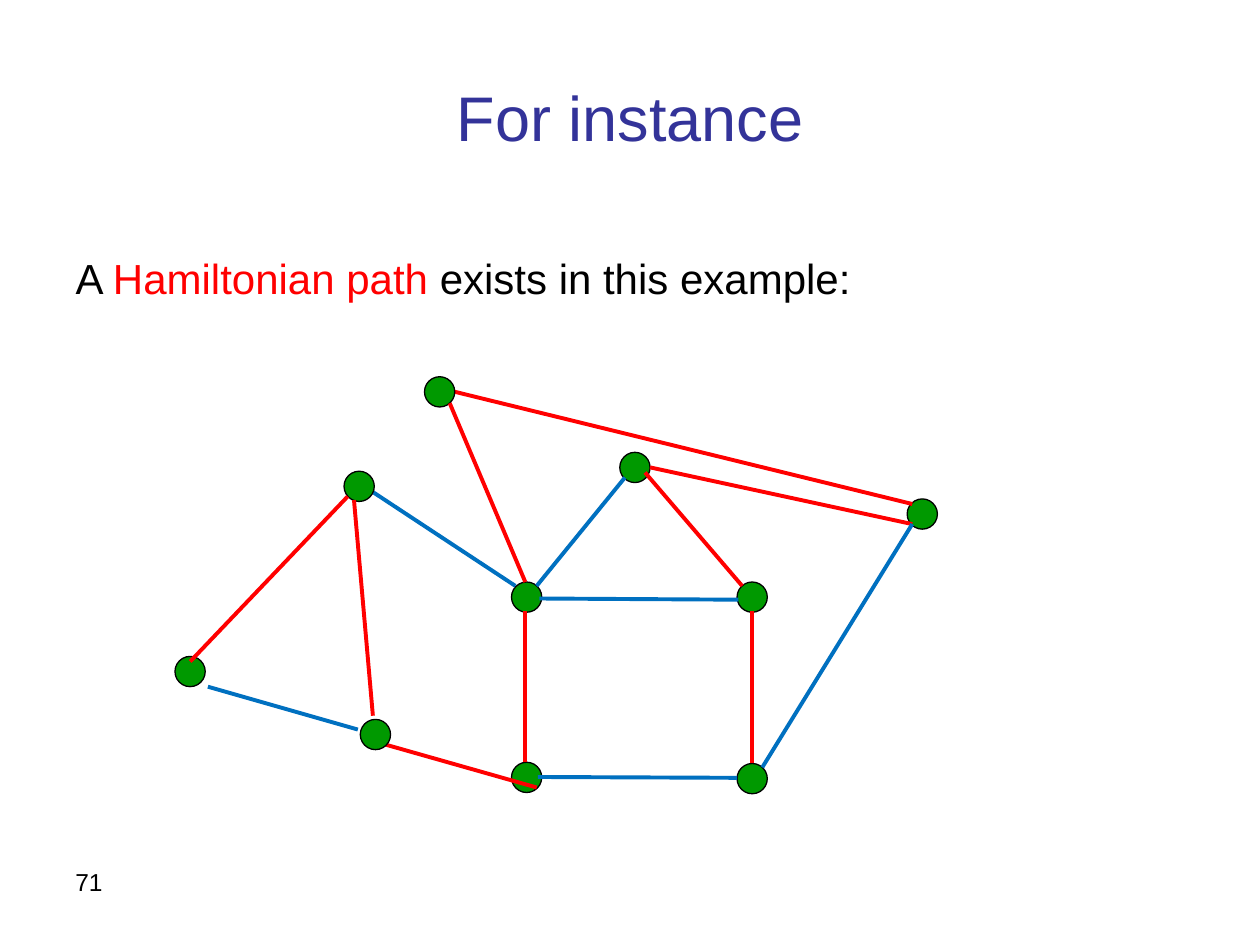
import pptx
import pptx.dml.color
import pptx.enum.shapes
import pptx.enum.text
import pptx.util
from lxml import etree
from pptx.util import Pt

COLORS = {
    "title": "333399",
    "text": "000000",
    "path": "FF0000",
    "edge": "0070C0",
    "node": "009900",
}
FONT = "Arial"
NODE_SIZE = 17.28
DRAWING = "http://schemas.openxmlformats.org/drawingml/2006/main"

# Layers from back to front: nodes (left, top), then edges (colour, from, to),
# in points relative to the graph's box
GRAPH_LAYERS = [
    (
        [(254.2, 43.5), (192.3, 117.6), (321.2, 117.6), (321.2, 221.3), (192.3, 220.6)],
        [
            ("edge", (257.1, 57.9), (206.7, 119.8)),
            ("path", (268.6, 55), (324.1, 119.8)),
            ("path", (200.2, 134.2), (200.2, 220.6)),
            ("path", (329.8, 134.2), (329.8, 221.3)),
            ("edge", (321.2, 229.5), (207.4, 229)),
            ("edge", (321.9, 127.7), (208.2, 127)),
            ("path", (120.3, 210.5), (206.7, 235)),
            ("edge", (194.5, 119.8), (108.1, 62.9)),
        ],
    ),
    (
        [(418.4, 70.1), (96.6, 54.3), (0, 160.1), (105.9, 196.1)],
        [
            ("edge", (18.8, 177.4), (104.5, 201.9)),
            ("path", (271.5, 52.1), (421.3, 84.5)),
            ("path", (102.3, 70.8), (113.1, 194)),
            ("edge", (335.6, 223.5), (421.3, 84.5)),
            ("path", (159.9, 8.9), (421.3, 73)),
        ],
    ),
    (
        [(142.6, 0.3)],
        [
            ("path", (8.7, 163), (98.7, 68.7)),
            ("path", (157, 15.4), (200.2, 117.6)),
        ],
    ),
]


def rgb(name):
    return pptx.dml.color.RGBColor.from_string(COLORS[name])


def place(shape, box):
    shape.left, shape.top, shape.width, shape.height = map(Pt, box)


def add_text(paragraph, text, size=24, color="text"):
    run = paragraph.add_run()
    run.text = text
    run.font.name = FONT
    run.font.size = Pt(size)
    run.font.color.rgb = rgb(color)


def set_frame(frame, anchor):
    frame.word_wrap = True
    frame.auto_size = pptx.enum.text.MSO_AUTO_SIZE.NONE
    frame.vertical_anchor = anchor


def build_title(slide, box):
    title = slide.shapes.title
    place(title, box)
    set_frame(title.text_frame, pptx.enum.text.MSO_ANCHOR.MIDDLE)
    paragraph = title.text_frame.paragraphs[0]
    paragraph.alignment = pptx.enum.text.PP_ALIGN.CENTER
    add_text(paragraph, "For instance", size=36, color="title")


def build_body(slide, box):
    body = slide.placeholders[1]
    place(body, box)
    set_frame(body.text_frame, pptx.enum.text.MSO_ANCHOR.TOP)
    paragraph = body.text_frame.paragraphs[0]
    paragraph.line_spacing = 1.5
    paragraph.space_before = Pt(4.8)
    add_text(paragraph, "A ")
    add_text(paragraph, "Hamiltonian path ", color="path")
    add_text(paragraph, "exists in this example:")
    # Plain paragraph without a bullet
    properties = paragraph._p.get_or_add_pPr()
    properties.set("marL", "0")
    properties.set("indent", "0")
    etree.SubElement(properties, f"{{{DRAWING}}}buNone")


def add_node(slide, left, top):
    node = slide.shapes.add_shape(
        pptx.enum.shapes.MSO_SHAPE.OVAL, Pt(left), Pt(top), Pt(NODE_SIZE), Pt(NODE_SIZE)
    )
    node.shadow.inherit = False
    node.fill.solid()
    node.fill.fore_color.rgb = rgb("node")
    node.line.color.rgb = rgb("text")
    node.line.width = Pt(0.75)


def add_edge(slide, color, start, end):
    edge = slide.shapes.add_connector(
        pptx.enum.shapes.MSO_CONNECTOR.STRAIGHT, *map(Pt, (*start, *end))
    )
    edge.line.color.rgb = rgb(color)
    edge.line.width = Pt(2.25)
    etree.SubElement(edge._element.spPr, f"{{{DRAWING}}}effectLst")


def build_graph(slide, left, top):
    def shift(point):
        return left + point[0], top + point[1]

    for nodes, edges in GRAPH_LAYERS:
        for node in nodes:
            add_node(slide, *shift(node))
        for color, start, end in edges:
            add_edge(slide, color, shift(start), shift(end))


def build_slide_number(slide, box):
    number = slide.shapes.add_textbox(*map(Pt, box))
    set_frame(number.text_frame, pptx.enum.text.MSO_ANCHOR.TOP)
    add_text(number.text_frame.paragraphs[0], "71", size=14)


def main():
    presentation = pptx.Presentation()
    presentation.slide_width = Pt(720)
    presentation.slide_height = Pt(540)
    slide = presentation.slides.add_slide(presentation.slide_layouts[1])
    build_title(slide, (36, 21.6, 648, 90))
    build_body(slide, (36, 126, 648, 356.4))
    build_graph(slide, 100, 215)
    build_slide_number(slide, (36, 491.76, 167.76, 37.44))
    presentation.save("out.pptx")


if __name__ == "__main__":
    main()
